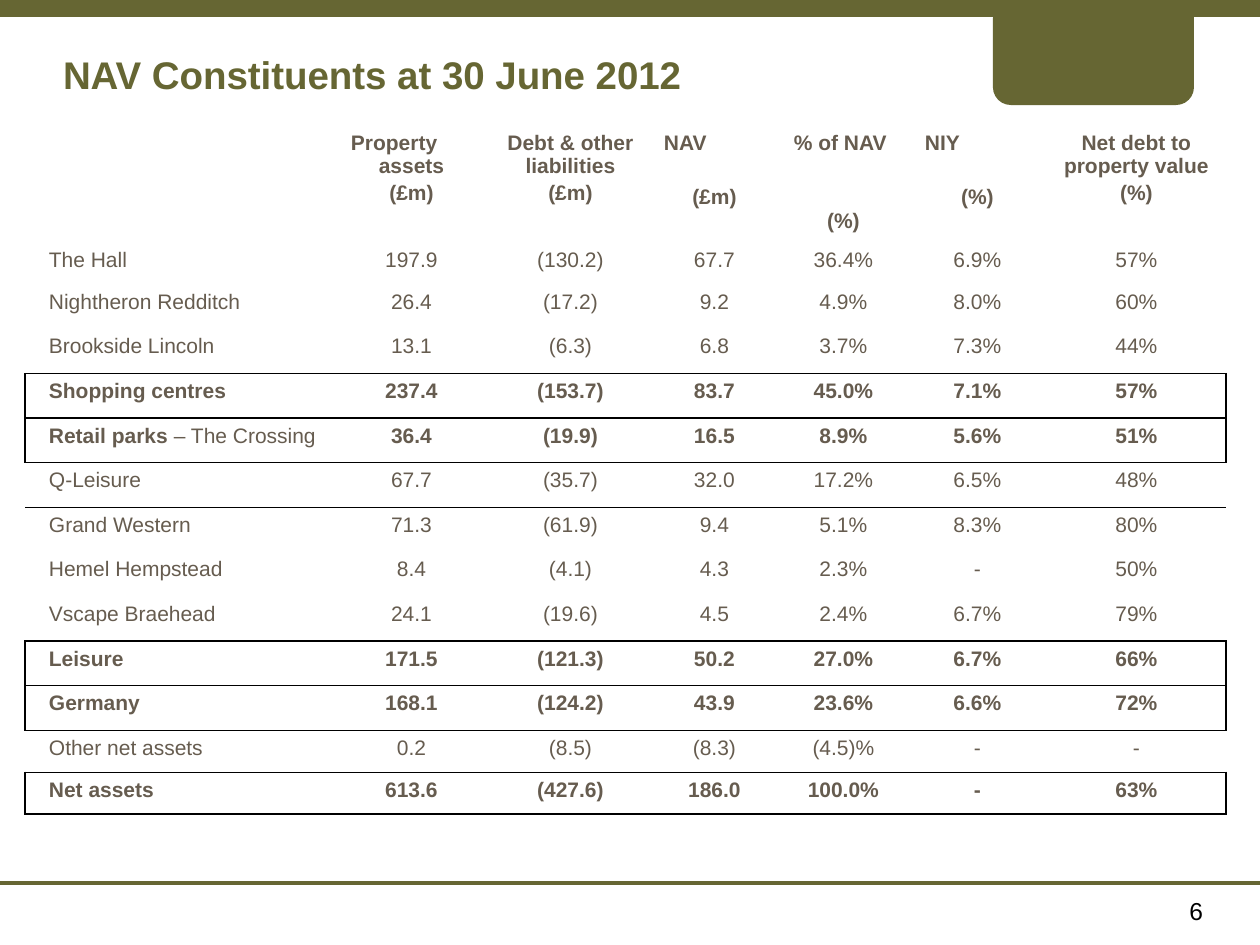
from itertools import accumulate

from lxml.etree import SubElement
from pptx import Presentation
from pptx.dml.color import RGBColor
from pptx.enum.shapes import MSO_CONNECTOR, MSO_SHAPE
from pptx.enum.text import MSO_ANCHOR, PP_ALIGN
from pptx.oxml.ns import qn
from pptx.util import Pt

EMU_PER_PX = 7257.14
PX_PER_POINT = 1.75

THEME = {
    "olive": RGBColor(0x66, 0x66, 0x33),
    "brown": RGBColor(0x66, 0x5C, 0x4F),
    "black": RGBColor(0, 0, 0),
    "font": "Arial",
    "title": 22,
    "number": 14,
    "table": 12,
    "border": 1,
    "table_style": "{2D5ABB26-0587-4C30-8999-92F81FD0307C}",
}

# Content
TITLE = "NAV Constituents at 30 June 2012"
PAGE_NUMBER = "6"

# Each heading line: text, left indent in px (None is centred), gap above in px
HEADINGS = [
    [],
    [("Property", 6, 0), ("assets", None, 0), ("(£m)", None, 3)],
    [("Debt & other liabilities", None, 0), ("(£m)", None, 3)],
    [("NAV", 1, 0), ("(£m)", None, 31)],
    [("% of NAV", 2, 0), ("(%)", None, 55)],
    [("NIY", 4, 0), ("(%)", None, 31)],
    [("Net debt to property value", None, 0), ("(%)", None, 3)],
]

# Name, lighter detail after it, whether the row is an outlined total, values
ROWS = [
    ("The Hall", "", False, ("197.9", "(130.2)", "67.7", "36.4%", "6.9%", "57%")),
    ("Nightheron Redditch", "", False, ("26.4", "(17.2)", "9.2", "4.9%", "8.0%", "60%")),
    ("Brookside Lincoln", "", False, ("13.1", "(6.3)", "6.8", "3.7%", "7.3%", "44%")),
    ("Shopping centres", "", True, ("237.4", "(153.7)", "83.7", "45.0%", "7.1%", "57%")),
    ("Retail parks ", "– The Crossing", True, ("36.4", "(19.9)", "16.5", "8.9%", "5.6%", "51%")),
    ("Q-Leisure", "", False, ("67.7", "(35.7)", "32.0", "17.2%", "6.5%", "48%")),
    ("Grand Western", "", False, ("71.3", "(61.9)", "9.4", "5.1%", "8.3%", "80%")),
    ("Hemel Hempstead", "", False, ("8.4", "(4.1)", "4.3", "2.3%", "-", "50%")),
    ("Vscape Braehead", "", False, ("24.1", "(19.6)", "4.5", "2.4%", "6.7%", "79%")),
    ("Leisure", "", True, ("171.5", "(121.3)", "50.2", "27.0%", "6.7%", "66%")),
    ("Germany", "", True, ("168.1", "(124.2)", "43.9", "23.6%", "6.6%", "72%")),
    ("Other net assets", "", False, ("0.2", "(8.5)", "(8.3)", "(4.5)%", "-", "-")),
    ("Net assets", "", True, ("613.6", "(427.6)", "186.0", "100.0%", "-", "63%")),
]

# Layout in px
SLIDE = (1260, 945)
TABLE_ORIGIN = (25, 125)
COLUMN_WIDTHS = (307, 159, 159, 129, 129, 139, 179)
HEADING_HEIGHT, EDGE_ROW_HEIGHT, MIDDLE_HEIGHT = 116, 42, 446
CELL_MARGINS = {"margin_left": 13, "margin_right": 13, "margin_top": 6, "margin_bottom": 6}
LABEL_MARGIN = 24
RULES = [(8, 10), (883, 2)]  # centre in px, weight in points


def px(length):
    return round(length * EMU_PER_PX)


def apply_format(target, values):
    for name, value in values.items():
        setattr(target, name, value)


def add_span(para, text, size, color, bold=False):
    span = para.add_run()
    span.text = text
    apply_format(span.font, {"name": THEME["font"], "size": Pt(size), "bold": bold})
    span.font.color.rgb = color


def add_table_span(para, text, bold):
    add_span(para, text, THEME["table"], THEME["brown"], bold)


def add_text(page, frame, text, size, color, bold, align, margins):
    box = page.shapes.add_textbox(*map(px, frame))
    values = {name: px(margin) for name, margin in margins.items()}
    apply_format(box.text_frame, {"word_wrap": True, **values})
    para = box.text_frame.paragraphs[0]
    para.alignment = align
    add_span(para, text, size, color, bold)
    return box


def add_border(cell, side):
    properties = cell._tc.get_or_add_tcPr()
    line = SubElement(properties, qn(f"a:ln{side}"), w=str(Pt(THEME["border"])))
    fill = SubElement(line, qn("a:solidFill"))
    SubElement(fill, qn("a:srgbClr"), val=str(THEME["black"]))


def fill_heading(cell, lines):
    for index, (text, indent, gap) in enumerate(lines):
        frame = cell.text_frame
        para = frame.add_paragraph() if index else frame.paragraphs[0]
        if index:
            para.space_before = Pt(round(gap / PX_PER_POINT, 2))
        para.alignment = PP_ALIGN.CENTER if indent is None else PP_ALIGN.LEFT
        if indent is not None:
            para._p.get_or_add_pPr().set("marL", str(px(indent)))
        add_table_span(para, text, True)


def add_page_frame(page):
    for center, weight in RULES:
        rule = page.shapes.add_connector(
            MSO_CONNECTOR.STRAIGHT, 0, px(center), px(SLIDE[0]), px(center))
        rule.line.color.rgb = THEME["olive"]
        rule.line.width = Pt(weight)
        SubElement(rule._element.spPr, qn("a:effectLst"))
    tab = page.shapes.add_shape(
        MSO_SHAPE.ROUNDED_RECTANGLE, *map(px, (993, 0, 201, 105)))
    tab.adjustments[0] = 0.17
    tab.shadow.inherit = False
    tab.fill.solid()
    tab.fill.fore_color.rgb = THEME["olive"]
    tab.line.fill.background()


def add_nav_table(page):
    middle = px(MIDDLE_HEIGHT) // 10
    edge = px(EDGE_ROW_HEIGHT)
    heights = [px(HEADING_HEIGHT), edge, *[middle] * 10, edge, edge]
    holder = page.shapes.add_table(
        len(heights), len(COLUMN_WIDTHS), *map(px, TABLE_ORIGIN),
        px(sum(COLUMN_WIDTHS)), sum(heights))
    table = holder.table
    table._tbl.tblPr.find(qn("a:tableStyleId")).text = THEME["table_style"]
    apply_format(table, {"first_row": False, "horz_banding": False})
    for column, width in zip(table.columns, COLUMN_WIDTHS):
        column.width = px(width)
    for row, height in zip(table.rows, heights):
        row.height = height

    # Text
    for column, lines in enumerate(HEADINGS):
        fill_heading(table.cell(0, column), lines)
    for index, (name, detail, total, values) in enumerate(ROWS, start=1):
        label = table.cell(index, 0).text_frame.paragraphs[0]
        add_table_span(label, name, total)
        if detail:
            add_table_span(label, detail, False)
        for column, value in enumerate(values, start=1):
            para = table.cell(index, column).text_frame.paragraphs[0]
            para.alignment = PP_ALIGN.CENTER
            add_table_span(para, value, total)

    # Outlines round the totals, shared with the rows above and below
    outlined = [False, *[row[2] for row in ROWS], False]
    last = len(COLUMN_WIDTHS) - 1
    for index, row in enumerate(table.rows):
        total = outlined[index]
        for column, cell in enumerate(row.cells):
            sides = {
                "L": total and column == 0,
                "R": total and column == last,
                "T": total or (index > 0 and outlined[index - 1]),
                "B": total or outlined[index + 1],
            }
            for side in (side for side, shown in sides.items() if shown):
                add_border(cell, side)
            cell.fill.background()
            margins = dict(CELL_MARGINS)
            if column == 0:
                margins["margin_left"] = LABEL_MARGIN
            apply_format(cell, {name: px(margin) for name, margin in margins.items()})


def main():
    deck = Presentation()
    apply_format(deck, {"slide_width": px(SLIDE[0]), "slide_height": px(SLIDE[1])})
    page = deck.slides.add_slide(deck.slide_layouts[6])
    add_page_frame(page)
    add_text(page, (1046, 890, 170, 45), PAGE_NUMBER, THEME["number"],
             THEME["black"], False, PP_ALIGN.RIGHT, CELL_MARGINS)
    title = add_text(page, (63, 38, 915, 73), TITLE, THEME["title"],
                     THEME["olive"], True, PP_ALIGN.LEFT,
                     dict.fromkeys(CELL_MARGINS, 0))
    title.text_frame.vertical_anchor = MSO_ANCHOR.MIDDLE
    add_nav_table(page)
    deck.save("out.pptx")


if __name__ == "__main__":
    main()
